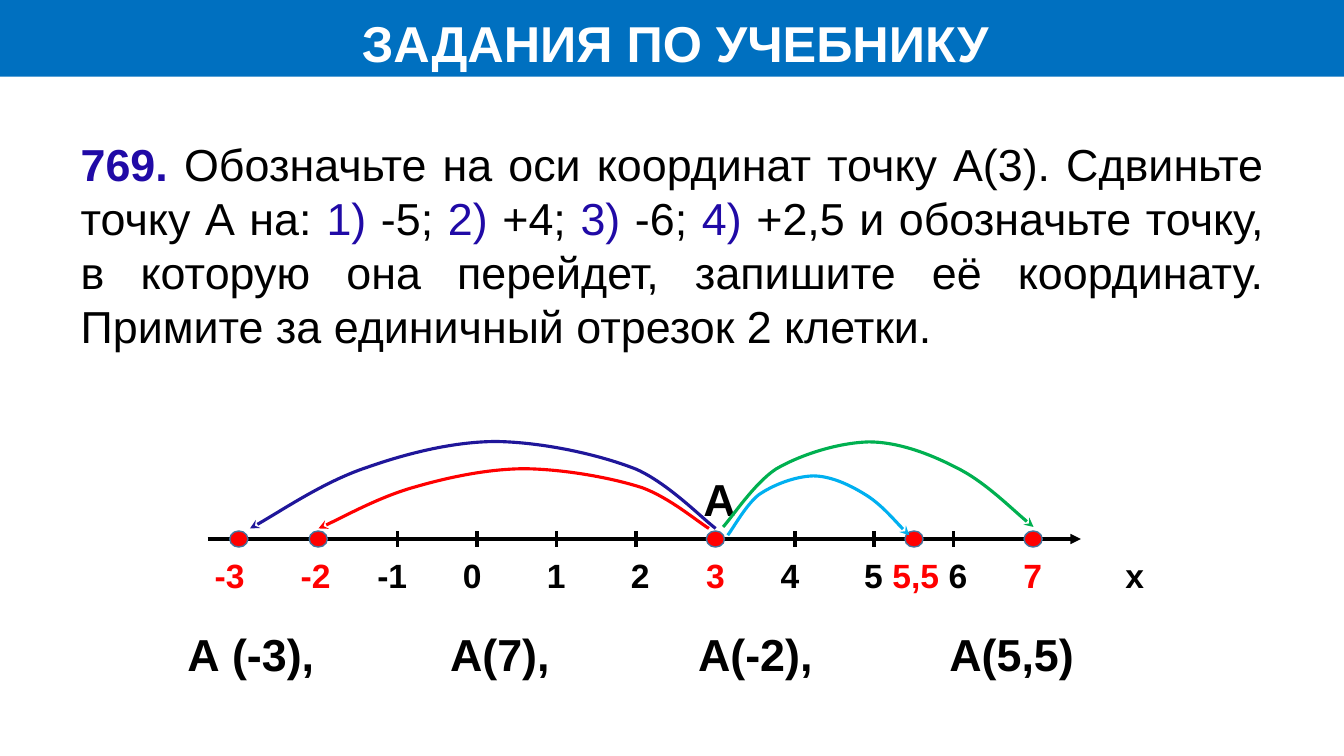
import pptx
import pptx.util
import pptx.dml.color
import pptx.enum.shapes
import pptx.enum.text
import pptx.oxml.ns
import lxml.etree

WIDTH, HEIGHT = 13.33, 7.5
COLUMNS = ROWS = 100
ZERO, UNIT, AXIS = 35.5, 5.91, 71.3
BLACK, WHITE, RED, INDIGO, BLUE = "000000", "FFFFFF", "FF0000", "200AA6", "0070C0"
ARC = [
    (0, 0), (0.03, 0.12), (0.1, 0.51), (0.17, 0.68),
    (0.25, 0.85), (0.37, 0.99), (0.47, 1),
    (0.56, 1), (0.66, 0.87), (0.75, 0.7),
    (0.84, 0.54), (0.95, 0.14), (1, 0),
]


def across(columns):
    return pptx.util.Inches(columns * WIDTH / COLUMNS)


def down(rows):
    return pptx.util.Inches(rows * HEIGHT / ROWS)


def axis_column(value):
    return ZERO + UNIT * value


def color(value):
    return pptx.dml.color.RGBColor.from_string(value)


def child(parent, tag, **attributes):
    return lxml.etree.SubElement(parent, pptx.oxml.ns.qn(tag), attributes)


def place(shape, left, top, width, height):
    shape.left, shape.top = across(left), down(top)
    shape.width, shape.height = across(width), down(height)


def write(para, text, size=32, fill=BLACK, bold=False):
    span = para.add_run()
    span.text = text
    span.font.name = "Arial"
    span.font.size = pptx.util.Pt(size)
    span.font.bold = bold
    span.font.color.rgb = color(fill)


def prepare(shape, anchor=pptx.enum.text.MSO_ANCHOR.TOP, align=pptx.enum.text.PP_ALIGN.LEFT):
    frame = shape.text_frame
    frame.word_wrap = True
    frame.auto_size = pptx.enum.text.MSO_AUTO_SIZE.NONE
    frame.vertical_anchor = anchor
    para = frame.paragraphs[0]
    para.alignment = align
    para.space_before = pptx.util.Pt(0)
    return para


def add_box(page, left, top, width, height, **layout):
    box = page.shapes.add_textbox(across(left), down(top), across(width), down(height))
    return prepare(box, **layout)


def set_tabs(para, columns, align):
    tabs = child(para._p.get_or_add_pPr(), "a:tabLst")
    for column in columns:
        child(tabs, "a:tab", pos=str(across(column)), algn=align)


def style_line(shape, fill, width, arrow=None):
    shape.line.color.rgb = color(fill)
    shape.line.width = pptx.util.Pt(width)
    if arrow:
        child(shape.line._get_or_add_ln(), "a:tailEnd", type=arrow)


def add_line(page, start, end, arrow=None):
    line = page.shapes.add_connector(
        pptx.enum.shapes.MSO_CONNECTOR.STRAIGHT,
        across(start[0]), down(start[1]), across(end[0]), down(end[1]),
    )
    style_line(line, BLACK, 2.5, arrow)
    child(line._element.spPr, "a:effectLst")


def add_filled(page, kind, left, top, width, height, fill, edge, edge_width):
    shape = page.shapes.add_shape(
        kind, across(left), down(top), across(width), down(height)
    )
    shape.shadow.inherit = False
    shape.fill.solid()
    shape.fill.fore_color.rgb = color(fill)
    style_line(shape, edge, edge_width)
    return shape


def add_dot(page, value):
    width, height = 1.35, 2.13
    add_filled(
        page, pptx.enum.shapes.MSO_SHAPE.OVAL,
        axis_column(value) - width / 2, AXIS - height / 2, width, height,
        RED, "43739E", 1,
    )


def round_off(shape):
    segments = list(shape._element.iter(pptx.oxml.ns.qn("a:lnTo")))
    for first in range(0, len(segments), 3):
        curve = child(segments[first].getparent(), "a:cubicBezTo")
        for segment in segments[first:first + 3]:
            curve.append(segment[0])
            segment.getparent().remove(segment)


def add_jump(page, start, end, base, peak, fill):
    points = [
        (across(start + (end - start) * x), down(base + (peak - base) * y))
        for x, y in ARC
    ]
    builder = page.shapes.build_freeform(*points[0])
    builder.add_line_segments(points[1:], close=False)
    jump = builder.convert_to_shape()
    round_off(jump)
    jump.shadow.inherit = False
    jump.fill.background()
    style_line(jump, fill, 2.25, "stealth")


def add_heading(page):
    band = add_filled(
        page, pptx.enum.shapes.MSO_SHAPE.RECTANGLE, 0, 0, 100, 10.13, BLUE, BLUE, 0
    )
    band.line.fill.background()
    band._element.getparent().insert(2, band._element)
    title = page.shapes.title
    place(title, 0.3, 0.93, 99.9, 9.47)
    para = prepare(title, align=pptx.enum.text.PP_ALIGN.CENTER)
    write(para, "ЗАДАНИЯ ПО УЧЕБНИКУ", size=36, fill=WHITE, bold=True)


def add_problem(page):
    body = page.placeholders[1]
    place(body, 5.25, 17.47, 89.57, 30.13)
    para = prepare(body, align=pptx.enum.text.PP_ALIGN.JUSTIFY)
    properties = para._p.get_or_add_pPr()
    properties.set("marL", "0")
    properties.set("indent", "0")
    child(properties, "a:buNone")
    write(para, "769. ", fill=INDIGO, bold=True)
    write(para, "Обозначьте на оси координат точку А(3). Сдвиньте точку А на: ")
    shifts = [
        " -5; ", " +4; ", " -6; ",
        " +2,5 и обозначьте точку, в которую она перейдет, "
        "запишите её координату. Примите за единичный отрезок 2 клетки.",
    ]
    for number, shift in enumerate(shifts, 1):
        write(para, f"{number})", fill=INDIGO)
        write(para, shift)


def add_axis(page):
    left = 11.78
    add_filled(
        page, pptx.enum.shapes.MSO_SHAPE.RECTANGLE,
        left, 67.33, 70.29, 13.33, WHITE, WHITE, 0.75,
    )
    add_line(page, (15.45, AXIS), (80.42, AXIS), "triangle")
    for value in range(-3, 8):
        column = axis_column(value)
        add_line(page, (column, AXIS - 1), (column, AXIS + 1))
    para = add_box(page, left, 72.75, 75, 6.67, anchor=pptx.enum.text.MSO_ANCHOR.MIDDLE)
    labels = [
        ("-3", 17.1), ("-2", 23.5), ("-1", 29.2), ("0", 35.15), ("1", 41.4),
        ("2", 47.65), ("3", 53.25), ("4", 58.8), ("5", 65), ("5,5", 68.15),
        ("6", 71.3), ("7", 76.85), ("х", 84.45),
    ]
    inset = 0.75
    set_tabs(para, [column - left - inset for text, column in labels], "ctr")
    marked = {"-3", "-2", "3", "5,5", "7"}
    for text, column in labels:
        write(para, "\t" + text, size=24, fill=RED if text in marked else BLACK, bold=True)


def add_answers(page):
    para = add_box(page, 13.2, 82.27, 68.87, 8.53)
    set_tabs(para, [19.55, 38, 56.7], "l")
    write(para, "А (-3),\tА(7),\tА(-2),\tА(5,5)", bold=True)


def main():
    deck = pptx.Presentation()
    deck.slide_width = pptx.util.Inches(WIDTH)
    deck.slide_height = pptx.util.Inches(HEIGHT)
    page = deck.slides.add_slide(deck.slide_layouts[1])
    add_heading(page)
    add_problem(page)
    add_axis(page)
    write(add_box(page, 51.6, 61.73, 3.5, 8.53), "А", bold=True)
    for value in (3, -2, -3, 5.5, 7):
        add_dot(page, value)
    add_jump(page, 52.75, 23.7, 69.9, 62, RED)
    add_jump(page, 53.25, 18.6, 69.9, 58.4, "1F169A")
    add_jump(page, 54.15, 67.65, 70.8, 62.95, "00B0F0")
    add_jump(page, 53.8, 76.9, 69.7, 58.45, "00B050")
    add_answers(page)
    deck.save("out.pptx")


if __name__ == "__main__":
    main()
